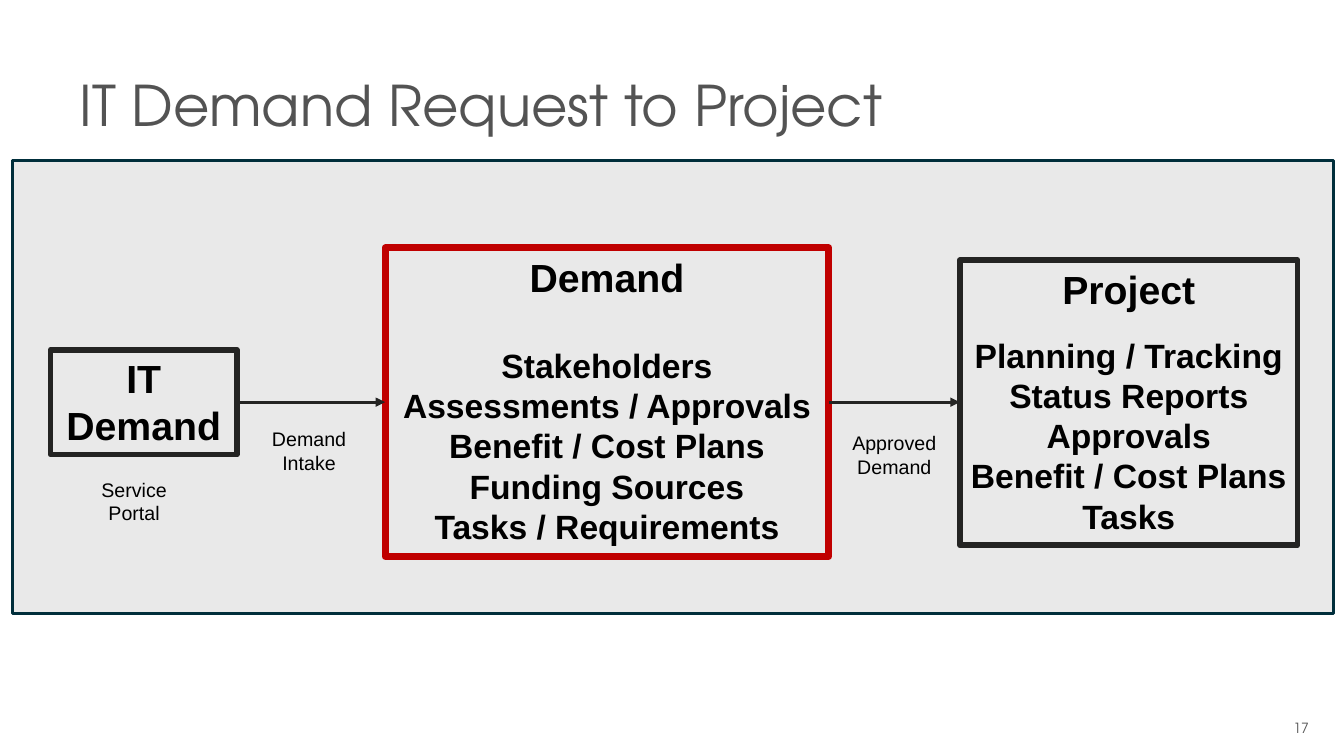
from lxml import etree
from pptx import Presentation
from pptx.dml.color import RGBColor
from pptx.enum.shapes import MSO_CONNECTOR as Connector, MSO_SHAPE as Shape
from pptx.enum.text import MSO_ANCHOR as Anchor, PP_ALIGN as Align
from pptx.oxml.ns import qn
from pptx.util import Inches, Pt

BLACK = RGBColor(0x00, 0x00, 0x00)
CHARCOAL = RGBColor(0x24, 0x24, 0x23)
GRAY = RGBColor(0x53, 0x53, 0x53)
PALE_GRAY = RGBColor(0xE9, 0xE9, 0xE9)
RED = RGBColor(0xC0, 0x00, 0x00)
TEAL = RGBColor(0x00, 0x2E, 0x3B)

TITLE_FONT = "TeX Gyre Adventor"
BODY_FONT = "Arial"
FLOW_Y = 3.99


def write_lines(shape, lines, size, font=BODY_FONT, color=BLACK,
                bold=False, align=Align.CENTER, anchor=Anchor.TOP):
    """Fill a shape with one paragraph per line, all in one style."""
    frame = shape.text_frame
    frame.word_wrap = True
    frame.vertical_anchor = anchor
    frame.text = "\n".join(lines)
    for para in frame.paragraphs:
        para.alignment = align
        for span in para.runs:
            span.font.name = font
            span.font.size = Pt(size)
            span.font.bold = bold
            span.font.color.rgb = color
    return frame


def add_text(page, place, lines, size, **style):
    box = page.shapes.add_textbox(*map(Inches, place))
    return write_lines(box, lines, size, **style)


def add_box(page, place, line_color, line_width, fill=None):
    box = page.shapes.add_shape(Shape.RECTANGLE, *map(Inches, place))
    box.shadow.inherit = False
    if fill is None:
        box.fill.background()
    else:
        box.fill.solid()
        box.fill.fore_color.rgb = fill
    box.line.color.rgb = line_color
    box.line.width = Pt(line_width)
    return box


def add_stage(page, place, color, width, heading, items=(), gap=0):
    """Add an outlined stage with a heading and, below a gap, its items."""
    box = add_box(page, place, color, width)
    paras = write_lines(box, [heading, *items], 28, bold=True).paragraphs
    for para in paras[1:]:
        para.runs[0].font.size = Pt(24)
    if items:
        paras[1].space_before = Pt(gap)


def add_arrow(page, start, end):
    arrow = page.shapes.add_connector(
        Connector.STRAIGHT, Inches(start), Inches(FLOW_Y), Inches(end), Inches(FLOW_Y))
    arrow.line.color.rgb = CHARCOAL
    arrow.line.width = Pt(2.25)
    properties = arrow.line._get_or_add_ln()
    etree.SubElement(properties, qn("a:tailEnd"), type="triangle")
    etree.SubElement(arrow._element.spPr, qn("a:effectLst"))


def main():
    deck = Presentation()
    deck.slide_width, deck.slide_height = Inches(13.33), Inches(7.5)
    page = deck.slides.add_slide(deck.slide_layouts[6])

    # Background panel, title and page number
    add_box(page, (0.12, 1.59, 13.11, 4.5), TEAL, 2, PALE_GRAY)
    title = add_text(page, (0.69, 0.4, 12, 1.36), ["IT Demand Request to Project"], 40,
                     font=TITLE_FONT, color=GRAY, align=Align.LEFT, anchor=Anchor.MIDDLE)
    title.paragraphs[0].line_spacing = 0.9
    add_text(page, (12.42, 7.02, 0.66, 0.4), ["17"], 10,
             font=TITLE_FONT, color=GRAY, align=Align.RIGHT, anchor=Anchor.MIDDLE)

    # Stages
    add_stage(page, (0.5, 3.47, 1.85, 1.04), CHARCOAL, 4, "IT Demand")
    add_stage(page, (3.82, 2.46, 4.4, 3.06), RED, 5, "Demand",
              ["Stakeholders", "Assessments / Approvals", "Benefit / Cost Plans",
               "Funding Sources", "Tasks / Requirements"], gap=32)
    add_stage(page, (9.52, 2.58, 3.35, 2.83), CHARCOAL, 4, "Project",
              ["Planning / Tracking", "Status Reports", "Approvals",
               "Benefit / Cost Plans", "Tasks"], gap=16)

    # Arrows between stages
    add_arrow(page, 2.35, 3.82)
    add_arrow(page, 8.22, 9.52)

    # Captions
    add_text(page, (2.54, 4.19, 1.05, 0.57), ["Demand", "Intake"], 14)
    add_text(page, (0.67, 4.69, 1.32, 0.57), ["Service Portal"], 14)
    add_text(page, (8.33, 4.23, 1.08, 0.57), ["Approved", "Demand"], 14)

    deck.save("out.pptx")


if __name__ == "__main__":
    main()
